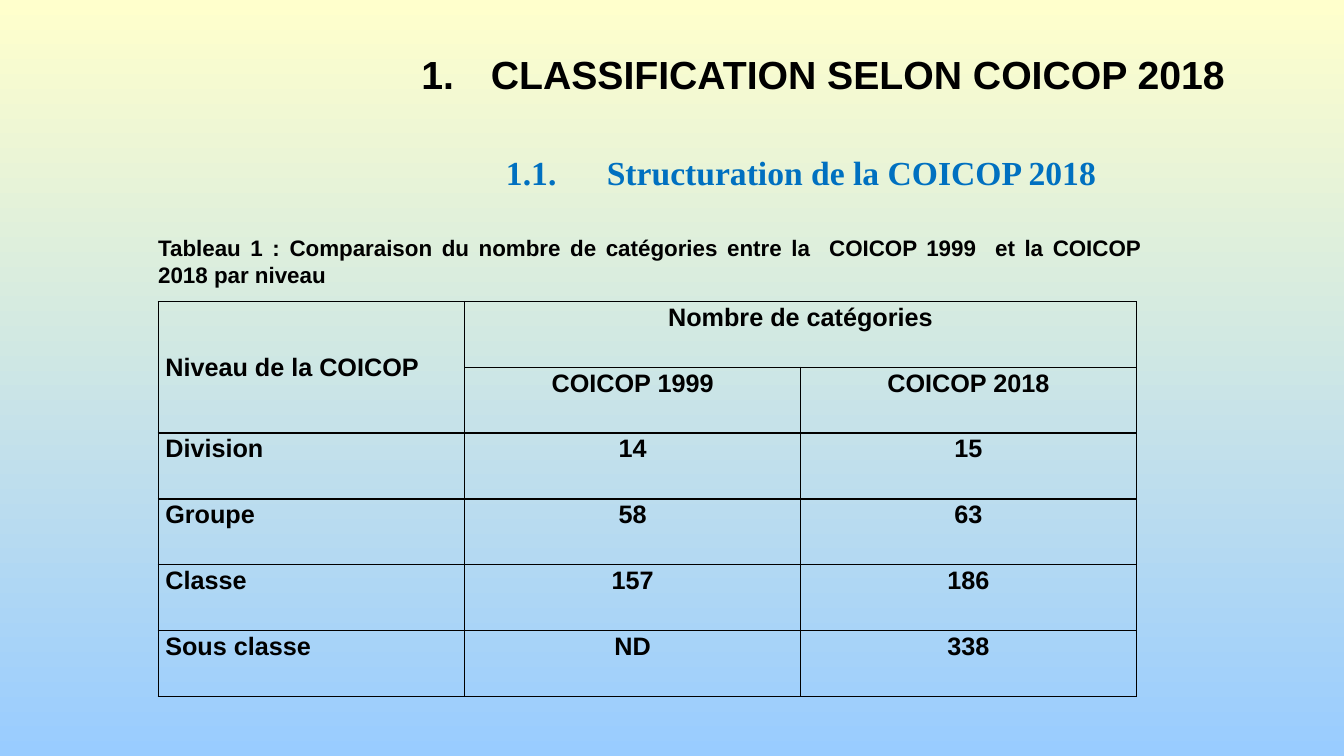
import pptx
import pptx.dml.color
import pptx.enum.text
import pptx.oxml
import pptx.oxml.ns
import pptx.util

Inches = pptx.util.Inches
ANCHOR = pptx.enum.text.MSO_ANCHOR
ALIGN = pptx.enum.text.PP_ALIGN


def color(hex_text):
    return pptx.dml.color.RGBColor.from_string(hex_text)


def write(frame, text, size=18, font="Arial", ink="000000", align=ALIGN.LEFT,
          spacing=1.0, anchor=ANCHOR.TOP, wrap=True, hanging=0):
    frame.word_wrap = wrap
    frame.vertical_anchor = anchor
    para = frame.paragraphs[0]
    para.alignment = align
    para.line_spacing = spacing
    if hanging:
        properties = para._p.get_or_add_pPr()
        properties.set("marL", str(Inches(hanging)))
        properties.set("indent", str(-Inches(hanging)))
    span = para.add_run()
    span.text = text
    span.font.size = pptx.util.Pt(size)
    span.font.name = font
    span.font.bold = True
    span.font.color.rgb = color(ink)


deck = pptx.Presentation()
deck.slide_width = Inches(13.33)
deck.slide_height = Inches(7.5)
page = deck.slides.add_slide(deck.slide_layouts[6])

backdrop = page.background.fill
backdrop.gradient()
backdrop.gradient_angle = 270
for stop, shade in zip(backdrop.gradient_stops, ["FFFFCC", "99CCFF"]):
    stop.color.rgb = color(shade)

texts = [
    ((4.08, 0.5, 8.49, 0.75), "1.\tCLASSIFICATION SELON COICOP 2018",
     dict(size=28, spacing=0.9, hanging=0.69)),
    ((4.92, 1.46, 6.11, 0.5), "1.1.\tStructuration de la COICOP 2018",
     dict(size=24, font="Times New Roman", ink="0070C0", wrap=False)),
    ((1.47, 2.27, 9.95, 0.64),
     "Tableau 1 : Comparaison du nombre de catégories entre la  COICOP 1999  et la COICOP 2018 par niveau",
     dict(size=16, align=ALIGN.JUSTIFY, anchor=ANCHOR.MIDDLE)),
]
for place, text, style in texts:
    box = page.shapes.add_textbox(*map(Inches, place))
    write(box.text_frame, text, **style)

rows = [
    ["Niveau de la COICOP", "Nombre de catégories", ""],
    ["", "COICOP 1999", "COICOP 2018"],
    ["Division", "14", "15"],
    ["Groupe", "58", "63"],
    ["Classe", "157", "186"],
    ["Sous classe", "ND", "338"],
]
widths = [3.04, 3.33, 3.33]
table = page.shapes.add_table(len(rows), len(widths), Inches(1.57), Inches(2.99),
                              Inches(sum(widths)), Inches(3.92)).table
table.first_row = False
table.horz_banding = False
for column, width in zip(table.columns, widths):
    column.width = Inches(width)
table.cell(0, 0).merge(table.cell(1, 0))
table.cell(0, 1).merge(table.cell(0, 2))

for row_index, row in enumerate(rows):
    table.rows[row_index].height = Inches(3.92 / len(rows))
    for column_index, text in enumerate(row):
        cell = table.cell(row_index, column_index)
        cell.margin_left = cell.margin_right = Inches(0.07)
        cell.margin_top = cell.margin_bottom = 0
        cell.fill.background()
        if text:
            write(cell.text_frame, text, spacing=1.07,
                  align=ALIGN.CENTER if column_index else ALIGN.JUSTIFY)
        cell.vertical_anchor = ANCHOR.MIDDLE if row_index + column_index == 0 else ANCHOR.TOP
        properties = cell._tc.get_or_add_tcPr()
        for position, side in enumerate(["lnL", "lnR", "lnT", "lnB"]):
            border = pptx.oxml.parse_xml(
                f'<a:{side} {pptx.oxml.ns.nsdecls("a")} w="12700"><a:solidFill>'
                f'<a:srgbClr val="000000"/></a:solidFill></a:{side}>')
            properties.insert(position, border)

deck.save("out.pptx")
